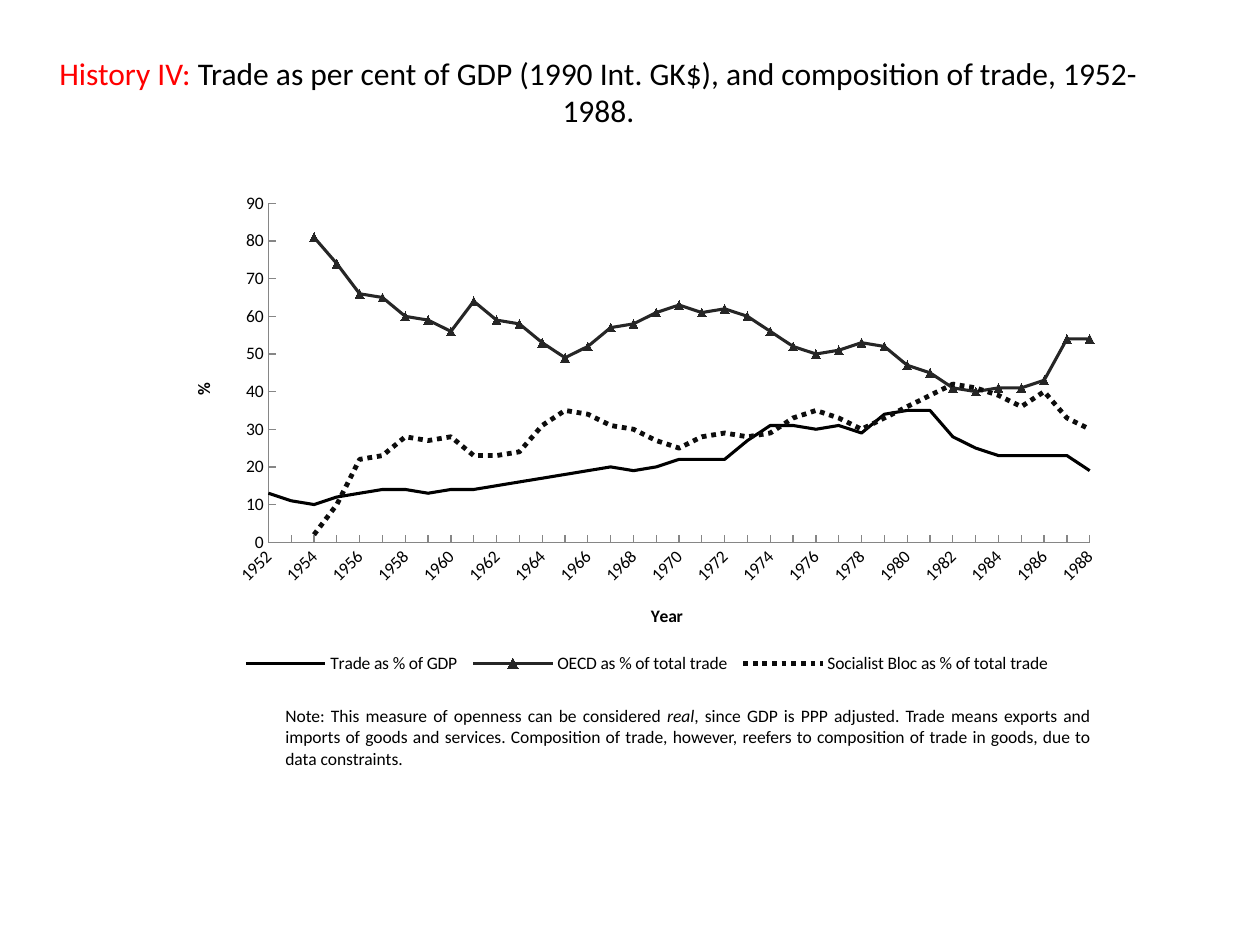
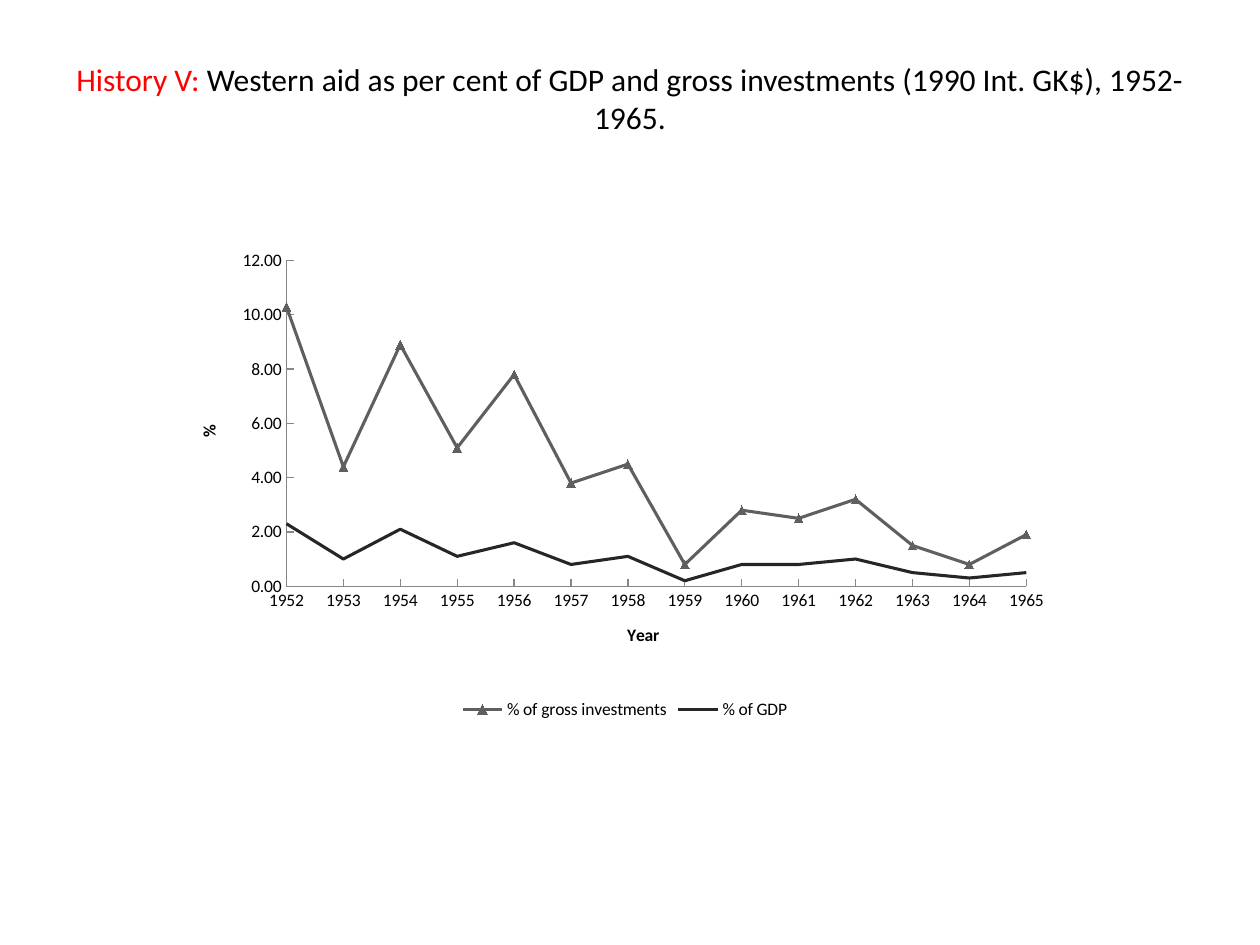
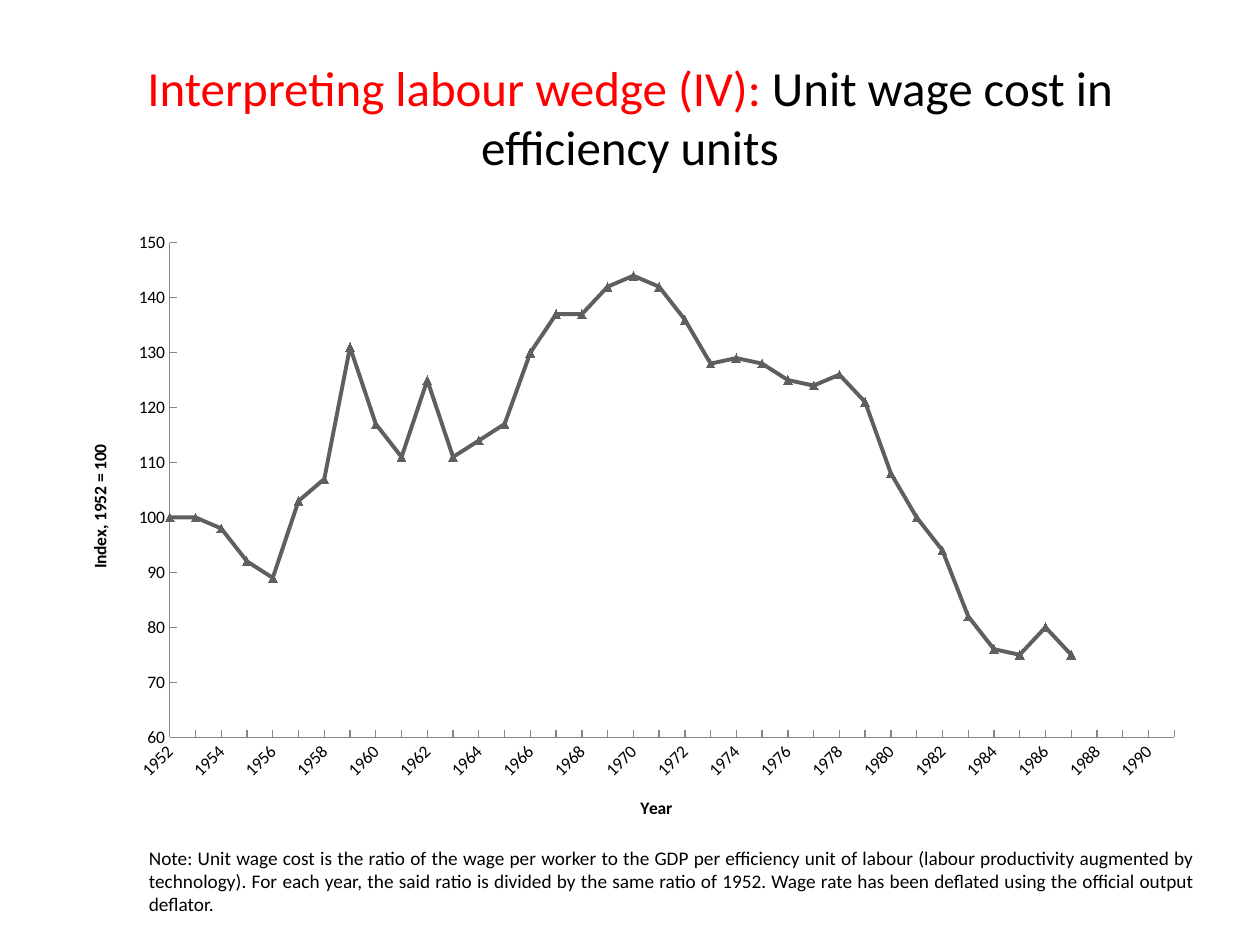
"""Build three slides of line charts on trade, Western aid and unit wage cost."""
from lxml import etree
from pptx import Presentation
from pptx.chart.data import CategoryChartData
from pptx.dml.color import RGBColor
from pptx.enum.chart import XL_CHART_TYPE as ChartType
from pptx.enum.chart import XL_LEGEND_POSITION as LegendPosition
from pptx.enum.chart import XL_MARKER_STYLE as MarkerStyle
from pptx.enum.chart import XL_TICK_MARK as TickMark
from pptx.enum.dml import MSO_LINE as Dash
from pptx.enum.text import MSO_ANCHOR as Anchor
from pptx.enum.text import PP_ALIGN as Align
from pptx.oxml.ns import qn
from pptx.util import Pt

FONT = "Calibri"
RED = RGBColor.from_string("FF0000")
BLACK = RGBColor.from_string("000000")
NEAR_BLACK = RGBColor.from_string("0D0D0D")
CHARCOAL = RGBColor.from_string("262626")
GRAY = RGBColor.from_string("5F5F5F")
AXIS_GRAY = RGBColor.from_string("868686")

FIRST_YEAR = 1952
SMALL = Pt(10)
THIN, MEDIUM, THICK = Pt(1.75), Pt(2.25), Pt(2.75)
TITLE_BOX = (36, 21.6, 648, 90)

SLIDES = [
    {
        "title": ("History IV: ", "Trade as per cent of GDP (1990 Int. GK$), "
                  "and composition of trade, 1952-1988."),
        "title_box": (18, 18, 648, 90), "title_size": Pt(18), "title_break": True,
        "chart_box": (108, 90, 534, 438), "last_year": 1988, "final_labels": [],
        "series": [
            {"name": "Trade as % of GDP", "color": BLACK, "width": THIN,
             "values": [13, 11, 10, 12, 13, 14, 14, 13, 14, 14, 15, 16, 17, 18, 19, 20, 19, 20, 22,
                        22, 22, 27, 31, 31, 30, 31, 29, 34, 35, 35, 28, 25, 23, 23, 23, 23, 19]},
            {"name": "OECD as % of total trade", "color": CHARCOAL, "width": THIN, "marker": True,
             "values": [None, None, 81, 74, 66, 65, 60, 59, 56, 64, 59, 58, 53, 49, 52, 57, 58, 61,
                        63, 61, 62, 60, 56, 52, 50, 51, 53, 52, 47, 45, 41, 40, 41, 41, 43, 54, 54]},
            {"name": "Socialist Bloc as % of total trade", "color": NEAR_BLACK, "width": THICK,
             "dash": Dash.ROUND_DOT,
             "values": [None, None, 2, 10, 22, 23, 28, 27, 28, 23, 23, 24, 31, 35, 34, 31, 30, 27,
                        25, 28, 29, 28, 29, 33, 35, 33, 30, 33, 36, 39, 42, 41, 39, 36, 40, 33, 30]},
        ],
        "value_title": "%", "format": "0", "slanted": True,
        "plot": (0.085, 0.06, 0.879, 0.442),
        "legend": True, "legend_place": (0.05, 0.64, 0.88, 0.04),
        "note": [("Note: This measure of openness can be considered ", False), ("real", True),
                 (", since GDP is PPP adjusted. Trade means exports and imports of goods and "
                  "services. Composition of trade, however, reefers to composition of trade in "
                  "goods, due to data constraints.", False)],
        "note_box": (156, 399.6, 474, 44), "note_size": SMALL,
    },
    {
        "title": ("History V: ", "Western aid as per cent of GDP and gross investments "
                  "(1990 Int. GK$), 1952-1965."),
        "title_size": Pt(18), "title_break": True,
        "chart_box": (102, 132, 510, 282), "last_year": 1965, "final_labels": [],
        "series": [
            {"name": "% of gross investments", "color": GRAY, "width": THIN, "marker": True,
             "values": [10.3, 4.4, 8.9, 5.1, 7.8, 3.8, 4.5, 0.8, 2.8, 2.5, 3.2, 1.5, 0.8, 1.9]},
            {"name": "% of GDP", "color": CHARCOAL, "width": THIN,
             "values": [2.3, 1, 2.1, 1.1, 1.6, 0.8, 1.1, 0.2, 0.8, 0.8, 1, 0.5, 0.3, 0.5]},
        ],
        "value_title": "%", "format": "0.00",
        "plot": (0.121, 0.06, 0.829, 0.66), "legend": True,
    },
    {
        "title": ("Interpreting labour wedge (IV): ", "Unit wage cost in efficiency units"),
        "title_size": Pt(28),
        "chart_box": (36, 126, 648, 356.4), "last_year": 1990, "final_labels": [""],
        "series": [
            {"name": "Series 1", "color": GRAY, "width": MEDIUM, "marker": True,
             "values": [100, 100, 98, 92, 89, 103, 107, 131, 117, 111, 125, 111, 114, 117, 130, 137,
                        137, 142, 144, 142, 136, 128, 129, 128, 125, 124, 126, 121, 108, 100, 94, 82,
                        76, 75, 80, 75]},
        ],
        "value_title": "Index, 1952 = 100", "minimum": 60, "format": "0", "slanted": True,
        "note": [("Note: Unit wage cost is the ratio of the wage per worker to the GDP per "
                  "efficiency unit of labour (labour productivity augmented by technology). For each "
                  "year, the said ratio is divided by the same ratio of 1952. Wage rate has been "
                  "deflated using the official output deflator.", False)],
        "note_box": (78, 480.2, 612, 47.5), "note_size": Pt(11),
    },
]


def points(lengths):
    return [Pt(length) for length in lengths]


def add_text(page, place, size, align):
    box = page.shapes.add_textbox(*points(place))
    box.text_frame.word_wrap = True
    para = box.text_frame.paragraphs[0]
    para.alignment = align
    para.font.size = size
    para.font.name = FONT
    return box.text_frame, para


def add_title(page, content):
    place = content.get("title_box", TITLE_BOX)
    frame, para = add_text(page, place, content["title_size"], Align.CENTER)
    frame.vertical_anchor = Anchor.MIDDLE
    for text, color in zip(content["title"], (RED, BLACK)):
        span = para.add_run()
        span.text = text
        span.font.color.rgb = color
    if content.get("title_break"):
        para.add_line_break()


def add_note(page, content):
    _, para = add_text(page, content["note_box"], content["note_size"], Align.JUSTIFY)
    para.font.color.rgb = BLACK
    for text, italic in content["note"]:
        span = para.add_run()
        span.text = text
        span.font.italic = italic


def value_node(tag, value):
    node = etree.Element(qn(tag))
    node.set("val", str(value))
    return node


def set_layout(parent, index, place, inner=False):
    for old in parent.findall(qn("c:layout")):
        parent.remove(old)
    layout = etree.Element(qn("c:layout"))
    manual = etree.SubElement(layout, qn("c:manualLayout"))
    if inner:
        manual.append(value_node("c:layoutTarget", "inner"))
    for tag in ("c:xMode", "c:yMode"):
        manual.append(value_node(tag, "edge"))
    for tag, value in zip(("c:x", "c:y", "c:w", "c:h"), place):
        manual.append(value_node(tag, value))
    parent.insert(index, layout)


def style_axis(axis, title):
    axis.has_major_gridlines = False
    axis.major_tick_mark = TickMark.INSIDE
    axis.minor_tick_mark = TickMark.NONE
    axis.format.line.color.rgb = AXIS_GRAY
    axis.format.line.width = Pt(0.75)
    axis.tick_labels.font.size = SMALL
    span = axis.axis_title.text_frame.paragraphs[0].add_run()
    span.text = title
    span.font.size = SMALL
    span.font.name = FONT
    span.font.bold = True
    span.font.color.rgb = BLACK


def style_series(series, look):
    series.smooth = False
    line = series.format.line
    line.color.rgb = look["color"]
    line.width = look["width"]
    if "dash" in look:
        line.dash_style = look["dash"]
    marker = series.marker
    if look.get("marker"):
        marker.style = MarkerStyle.TRIANGLE
        marker.size = 5
        marker.format.fill.solid()
        marker.format.fill.fore_color.rgb = look["color"]
        marker.format.line.fill.background()
    else:
        marker.style = MarkerStyle.NONE


def chart_data(content):
    data = CategoryChartData(number_format=content["format"])
    years = range(FIRST_YEAR, content["last_year"] + 1)
    labels = [str(year) for year in years] + content["final_labels"]
    data.categories = labels
    for look in content["series"]:
        missing = len(labels) - len(look["values"])
        data.add_series(look["name"], look["values"] + [None] * missing)
    return data


def add_line_chart(page, content):
    frame = page.shapes.add_chart(
        ChartType.LINE_MARKERS, *points(content["chart_box"]), chart_data(content))
    chart = frame.chart
    chart.has_title = False
    chart.font.size = SMALL
    chart.font.name = FONT
    chart.font.color.rgb = BLACK
    plot = chart.plots[0]
    plot.vary_by_categories = False
    for series, look in zip(plot.series, content["series"]):
        style_series(series, look)

    years, values = chart.category_axis, chart.value_axis
    style_axis(years, "Year")
    style_axis(values, content["value_title"])
    values.minimum_scale = content.get("minimum")
    values.tick_labels.number_format = content["format"]
    values.tick_labels.number_format_is_linked = False
    for old in values._element.findall(qn("c:crossBetween")):
        values._element.remove(old)
    values._element.find(qn("c:crosses")).addnext(value_node("c:crossBetween", "midCat"))
    if content.get("slanted"):
        years._element.find(qn("c:txPr")).find(qn("a:bodyPr")).set("rot", "-2700000")
        years._element.find(qn("c:lblOffset")).addnext(value_node("c:tickLblSkip", 2))

    if "plot" in content:
        set_layout(chart._chartSpace.chart.plotArea, 0, content["plot"], inner=True)
    chart.has_legend = content.get("legend", False)
    if chart.has_legend:
        legend = chart.legend
        legend.position = LegendPosition.BOTTOM
        legend.include_in_layout = False
        legend.font.size = SMALL
        if "legend_place" in content:
            set_layout(legend._element, 1, content["legend_place"])


def main():
    deck = Presentation()
    deck.slide_width, deck.slide_height = points((720, 540))
    for content in SLIDES:
        page = deck.slides.add_slide(deck.slide_layouts[6])
        add_title(page, content)
        add_line_chart(page, content)
        if "note" in content:
            add_note(page, content)
    deck.save("out.pptx")


if __name__ == "__main__":
    main()
